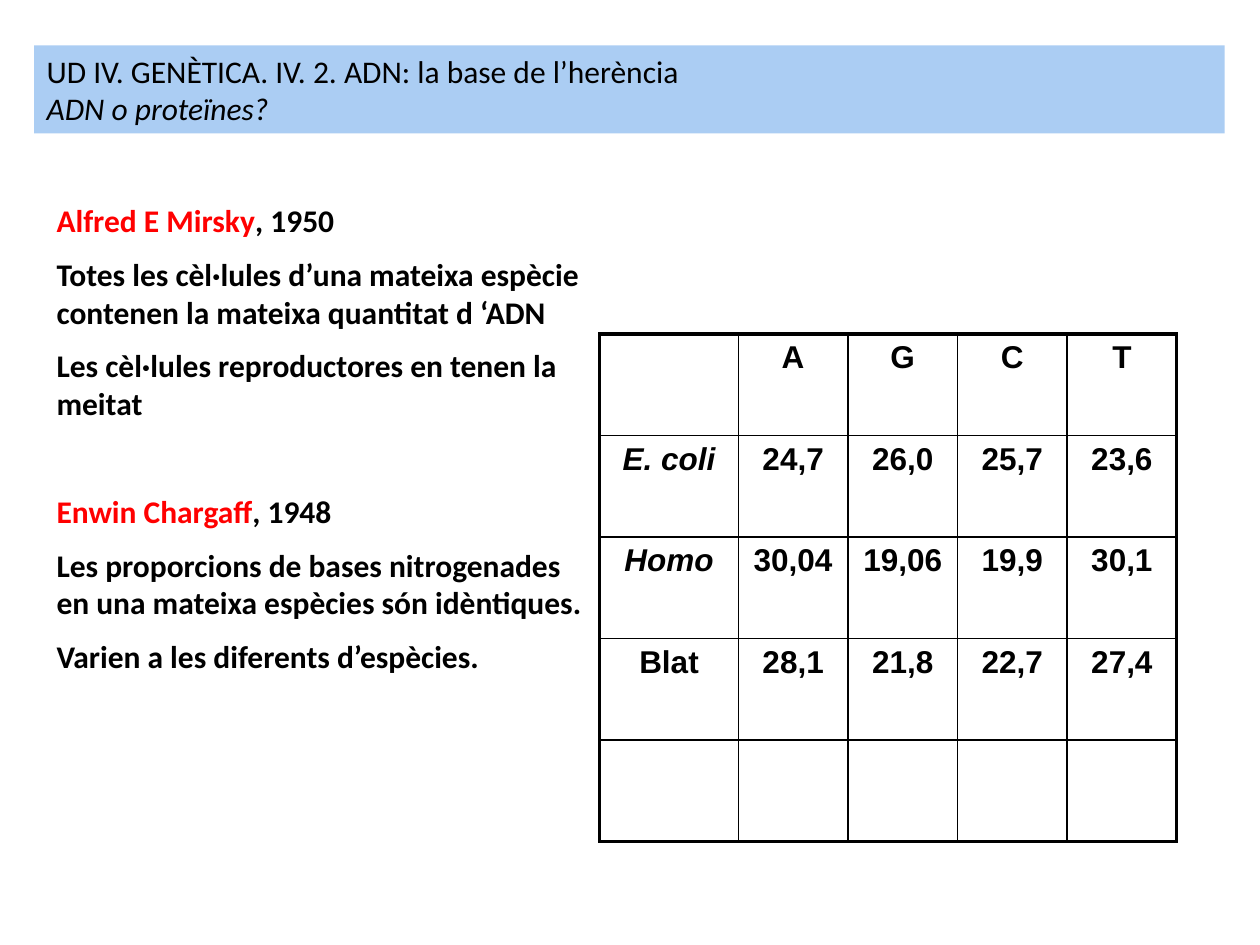
from dataclasses import dataclass

from lxml import etree
from pptx import Presentation
from pptx import util as u
from pptx.dml.color import RGBColor
from pptx.enum import text
from pptx.oxml.ns import qn


@dataclass(frozen=True)
class Theme:
    black: str = "000000"
    red: str = "FF0000"
    banner: str = "ABCDF3"
    body_font: str = "Calibri"
    table_font: str = "Arial"
    size: float = 18
    outer_line: float = 2.25
    inner_line: float = 1


@dataclass(frozen=True)
class Finding:
    author: str
    year: str
    statements: tuple[str, ...]


THEME = Theme()
TITLE = "UD IV. GENÈTICA. IV. 2. ADN: la base de l’herència"
SUBTITLE = "ADN o proteïnes?"
FINDINGS = (
    Finding("Alfred E Mirsky", "1950", (
        "Totes les cèl·lules d’una mateixa espècie contenen la mateixa quantitat d ‘ADN",
        "Les cèl·lules reproductores en tenen la meitat",
    )),
    Finding("Enwin Chargaff", "1948", (
        "Les proporcions de bases nitrogenades en una mateixa espècies són idèntiques.",
        "Varien a les diferents d’espècies.",
    )),
)
BASE_PROPORTIONS = (
    ("", "A", "G", "C", "T"),
    ("E. coli", "24,7", "26,0", "25,7", "23,6"),
    ("Homo", "30,04", "19,06", "19,9", "30,1"),
    ("Blat", "28,1", "21,8", "22,7", "27,4"),
    ("", "", "", "", ""),
)
ITALIC_NAMES = {"E. coli", "Homo"}
PARAGRAPH_GAP = 9
FINDING_GAP = 40


def add_text(paragraph, content: str, *, font: str = THEME.body_font,
             color: str = THEME.black, bold: bool = False, italic: bool = False) -> None:
    run = paragraph.add_run()
    run.text = content
    run.font.name = font
    run.font.size = u.Pt(THEME.size)
    run.font.color.rgb = RGBColor.from_string(color)
    run.font.bold = bold
    run.font.italic = italic


def next_paragraph(frame, gap: float = 0):
    """Return the frame's unused first paragraph, or a new one set off by gap points."""
    first = frame.paragraphs[0]
    if not first.runs:
        return first
    paragraph = frame.add_paragraph()
    paragraph.space_before = u.Pt(gap)
    return paragraph


def place(shape, left: float, top: float, width: float, height: float) -> None:
    shape.left, shape.top = u.Inches(left), u.Inches(top)
    shape.width, shape.height = u.Inches(width), u.Inches(height)


def draw_title(slide) -> None:
    title = slide.shapes.title
    place(title, 0.27, 0.36, 9.45, 0.7)
    title.fill.solid()
    title.fill.fore_color.rgb = RGBColor.from_string(THEME.banner)
    frame = title.text_frame
    frame.auto_size = text.MSO_AUTO_SIZE.NONE
    frame.vertical_anchor = text.MSO_ANCHOR.TOP
    for content, italic in ((TITLE, False), (SUBTITLE, True)):
        paragraph = next_paragraph(frame)
        paragraph.alignment = text.PP_ALIGN.LEFT
        add_text(paragraph, content, italic=italic)


def draw_findings(slide, findings: tuple[Finding, ...]) -> None:
    box = slide.shapes.add_textbox(0, 0, 0, 0)
    place(box, 0.35, 1.55, 4.49, 5.06)
    frame = box.text_frame
    frame.word_wrap = True
    for finding in findings:
        heading = next_paragraph(frame, FINDING_GAP)
        add_text(heading, finding.author, color=THEME.red, bold=True)
        add_text(heading, f", {finding.year}", bold=True)
        for statement in finding.statements:
            add_text(next_paragraph(frame, PARAGRAPH_GAP), statement, bold=True)


def set_borders(cell, outer_sides: dict[str, bool]) -> None:
    """Rule each side (L, R, T, B), heavier where it lies on the table's edge."""
    properties = cell._tc.get_or_add_tcPr()
    for side, is_outer in outer_sides.items():
        width = THEME.outer_line if is_outer else THEME.inner_line
        line = etree.SubElement(properties, qn(f"a:ln{side}"), w=str(int(u.Pt(width))))
        fill = etree.SubElement(line, qn("a:solidFill"))
        etree.SubElement(fill, qn("a:srgbClr"), val=THEME.black)


def draw_table(slide, rows: tuple[tuple[str, ...], ...]) -> None:
    last_row, last_column = len(rows) - 1, len(rows[0]) - 1
    table = slide.shapes.add_table(
        len(rows), len(rows[0]), u.Inches(4.76), u.Inches(2.65),
        u.Inches(4.57), u.Inches(4.03)).table
    table.first_row = table.horz_banding = False
    for index, column in enumerate(table.columns):
        column.width = u.Inches(0.87 if index else 1.1)
    for r, row in enumerate(rows):
        for c, content in enumerate(row):
            cell = table.cell(r, c)
            set_borders(cell, {"L": c == 0, "R": c == last_column,
                               "T": r == 0, "B": r == last_row})
            cell.fill.background()
            if content:
                paragraph = cell.text_frame.paragraphs[0]
                paragraph.alignment = text.PP_ALIGN.CENTER
                add_text(paragraph, content, font=THEME.table_font, bold=True,
                         italic=content in ITALIC_NAMES)


def main() -> None:
    presentation = Presentation()
    presentation.slide_width = u.Inches(10)
    presentation.slide_height = u.Inches(7.5)
    slide = presentation.slides.add_slide(presentation.slide_layouts.get_by_name("Title Only"))
    draw_title(slide)
    draw_findings(slide, FINDINGS)
    draw_table(slide, BASE_PROPORTIONS)
    presentation.save("out.pptx")


if __name__ == "__main__":
    main()
